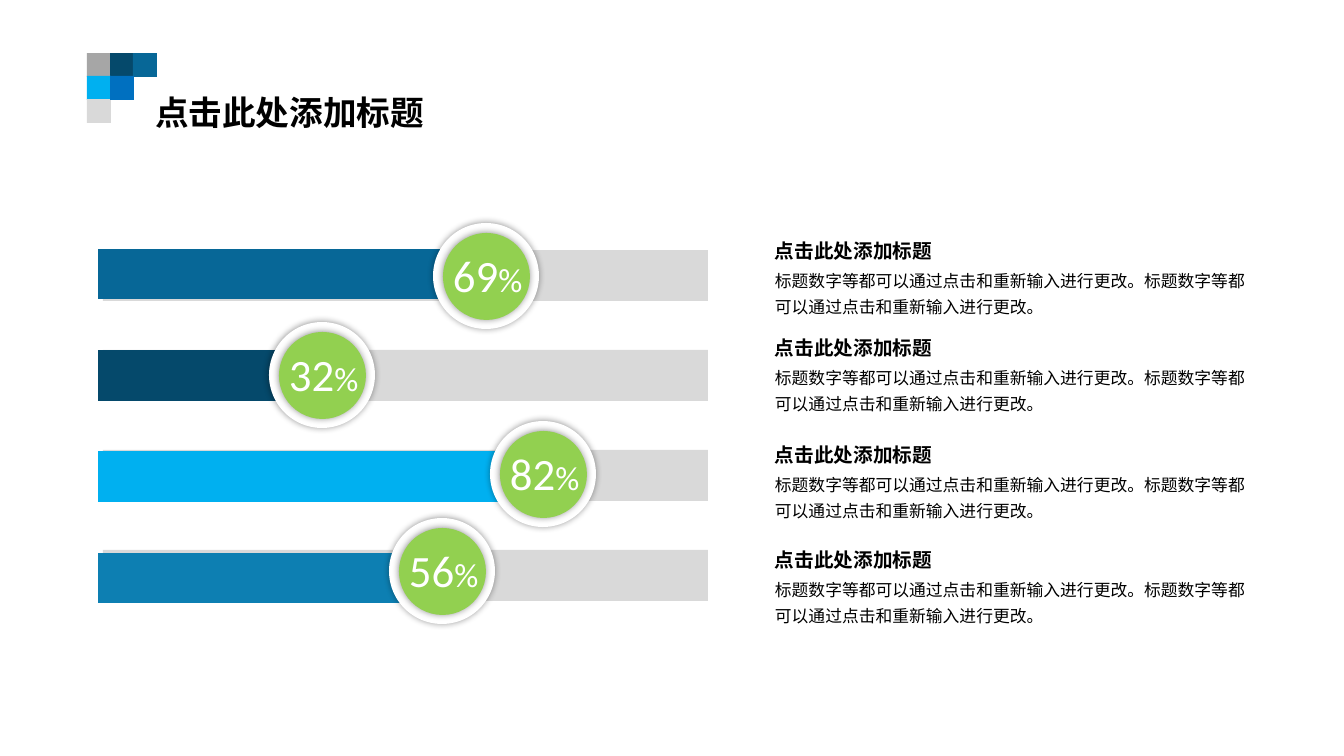
from lxml import etree
from pptx import Presentation
from pptx.chart.data import CategoryChartData
from pptx.dml.color import RGBColor
from pptx.enum.chart import XL_CHART_TYPE
from pptx.enum.shapes import MSO_SHAPE
from pptx.enum.text import MSO_ANCHOR, MSO_AUTO_SIZE, PP_ALIGN
from pptx.oxml import parse_xml
from pptx.oxml.ns import nsdecls, qn
from pptx.util import Inches, Pt

PX = Inches(1) / 100.8
RECTANGLE, OVAL = MSO_SHAPE.RECTANGLE, MSO_SHAPE.OVAL
BAR_CLUSTERED = XL_CHART_TYPE.BAR_CLUSTERED
TOP, LEFT = MSO_ANCHOR.TOP, PP_ALIGN.LEFT
GROW = MSO_AUTO_SIZE.SHAPE_TO_FIT_TEXT

LATIN, CHINESE = "Calibri", "Noto Sans CJK SC"
BLACK = RGBColor(0x00, 0x00, 0x00)
WHITE = RGBColor(0xFF, 0xFF, 0xFF)
GREY = RGBColor(0xA6, 0xA6, 0xA6)
PALE = RGBColor(0xD9, 0xD9, 0xD9)
NAVY = RGBColor(0x05, 0x49, 0x6B)
TEAL = RGBColor(0x07, 0x67, 0x97)
STEEL = RGBColor(0x0D, 0x7F, 0xB2)
CYAN = RGBColor(0x00, 0xB0, 0xF0)
BLUE = RGBColor(0x00, 0x70, 0xC0)
GREEN = RGBColor(0x92, 0xD0, 0x50)

HEADING = "点击此处添加标题"
DETAIL = "标题数字等都可以通过点击和重新输入进行更改。" * 2

# Column, row and colour of each square in the corner mosaic
MOSAIC = [(0, 0, GREY), (1, 0, NAVY), (2, 0, TEAL),
          (0, 1, CYAN), (0, 2, PALE), (1, 1, BLUE)]
# Bars from bottom to top: value and colour
BARS = [(75, STEEL), (100, CYAN), (50, NAVY), (88, TEAL)]
# Left, top and percentage of each badge
BADGES = [(433, 223, "69"), (269, 322, "32"), (490, 421, "82"), (389, 518, "56")]
NOTE_TOPS = [234, 331, 438, 543]


def emu(*lengths):
    return [round(length * PX) for length in lengths]


def add_plain_shape(page, kind, box, color):
    shape = page.shapes.add_shape(kind, *emu(*box))
    shape.shadow.inherit = False
    shape.fill.solid()
    shape.fill.fore_color.rgb = color
    shape.line.fill.background()
    return shape


def add_glow(shape):
    effects = shape._element.spPr.find(qn("a:effectLst"))
    effects.append(parse_xml(
        f'<a:outerShdw {nsdecls("a")} blurRad="{Pt(5)}" dist="0" dir="0" algn="ctr" '
        'rotWithShape="0"><a:srgbClr val="000000"><a:alpha val="40000"/></a:srgbClr>'
        '</a:outerShdw>'))


def add_text_box(page, box):
    frame = page.shapes.add_textbox(*emu(*box)).text_frame
    frame.word_wrap = True
    frame.auto_size = GROW
    return frame.paragraphs[0]


def set_chinese(para, text, size, bold=False):
    para.text = text
    font = para.font
    font.name, font.size, font.bold = CHINESE, Pt(size), bold
    font.color.rgb = BLACK
    east_asian = etree.SubElement(para._p.pPr.find(qn("a:defRPr")), qn("a:ea"))
    east_asian.set("typeface", CHINESE)


def add_header(page, left, top):
    pitch, side = 23, 24
    for column, row, color in MOSAIC:
        box = (left + column * pitch, top + row * pitch, side, side)
        add_plain_shape(page, RECTANGLE, box, color)
    title = page.shapes.title
    title.left, title.top, title.width, title.height = emu(left + 58, top + 34, 314, 50)
    frame = title.text_frame
    frame.vertical_anchor, frame.word_wrap, frame.auto_size = TOP, True, GROW
    para = frame.paragraphs[0]
    para.alignment = LEFT
    set_chinese(para, HEADING, 24, bold=True)


def add_bar_chart(page, left, top, width, height):
    data = CategoryChartData()
    data.categories = ["1"]
    for number, (value, _) in enumerate(BARS, 1):
        data.add_series(f"Series {number}", [value])
    chart = page.shapes.add_chart(
        BAR_CLUSTERED, *emu(left, top, width, height), data).chart
    chart.has_legend = chart.has_title = False
    chart.font.name, chart.font.size = LATIN, Pt(10)
    chart.font.color.rgb = BLACK
    chart.value_axis.minimum_scale, chart.value_axis.maximum_scale = 0, 120
    chart.value_axis.has_major_gridlines = False
    chart.value_axis.visible = chart.category_axis.visible = False
    plot = chart.plots[0]
    plot.gap_width, plot.overlap, plot.vary_by_categories = 500, -100, False
    for series, (_, color) in zip(plot.series, BARS):
        series.format.fill.solid()
        series.format.fill.fore_color.rgb = color

    # Fixed plot area, with an even margin
    margin = 11
    sizes = {"x": margin / width, "y": margin / height,
             "w": 1 - 2 * margin / width, "h": 1 - 2 * margin / height}
    area = chart._chartSpace.chart.plotArea
    for layout in area.findall(qn("c:layout")):
        area.remove(layout)
    modes = "".join(f'<c:{side}Mode val="edge"/>' for side in "xy")
    values = "".join(f'<c:{name} val="{size:.4f}"/>' for name, size in sizes.items())
    area.insert(0, parse_xml(
        f'<c:layout {nsdecls("c")}><c:manualLayout><c:layoutTarget val="inner"/>'
        f'{modes}{values}</c:manualLayout></c:layout>'))


def add_progress_bars(page, left, top):
    for row in range(len(BARS)):
        box = (left + 16, top + 139 + row * 100, 605, 51)
        add_plain_shape(page, RECTANGLE, box, PALE)
    add_bar_chart(page, left, top, 535, 630)


def add_badge(page, left, top, number):
    for inset, side, color in ((0, 106, WHITE), (10, 87, GREEN)):
        add_glow(add_plain_shape(
            page, OVAL, (left + inset, top + inset, side, side), color))
    para = add_text_box(page, (left + 10, top + 20, 96, 65))
    para.font.name = LATIN
    para.font.color.rgb = WHITE
    for text, size in ((number, 32), ("%", 24)):
        span = para.add_run()
        span.text = text
        span.font.size = Pt(size)


def add_note(page, left, top, width):
    set_chinese(add_text_box(page, (left, top, 187, 34)), HEADING, 14, bold=True)
    detail = add_text_box(page, (left, top + 26, width, 90))
    detail.line_spacing = 1.3
    set_chinese(detail, DETAIL, 12)


def main():
    deck = Presentation()
    deck.slide_width, deck.slide_height = emu(1344, 756)
    page = deck.slides.add_slide(deck.slide_layouts[5])
    add_header(page, 87, 53)
    add_progress_bars(page, 87, 111)
    for badge in BADGES:
        add_badge(page, *badge)
    for top in NOTE_TOPS:
        add_note(page, 765, top, 505)
    deck.save("out.pptx")


if __name__ == "__main__":
    main()
